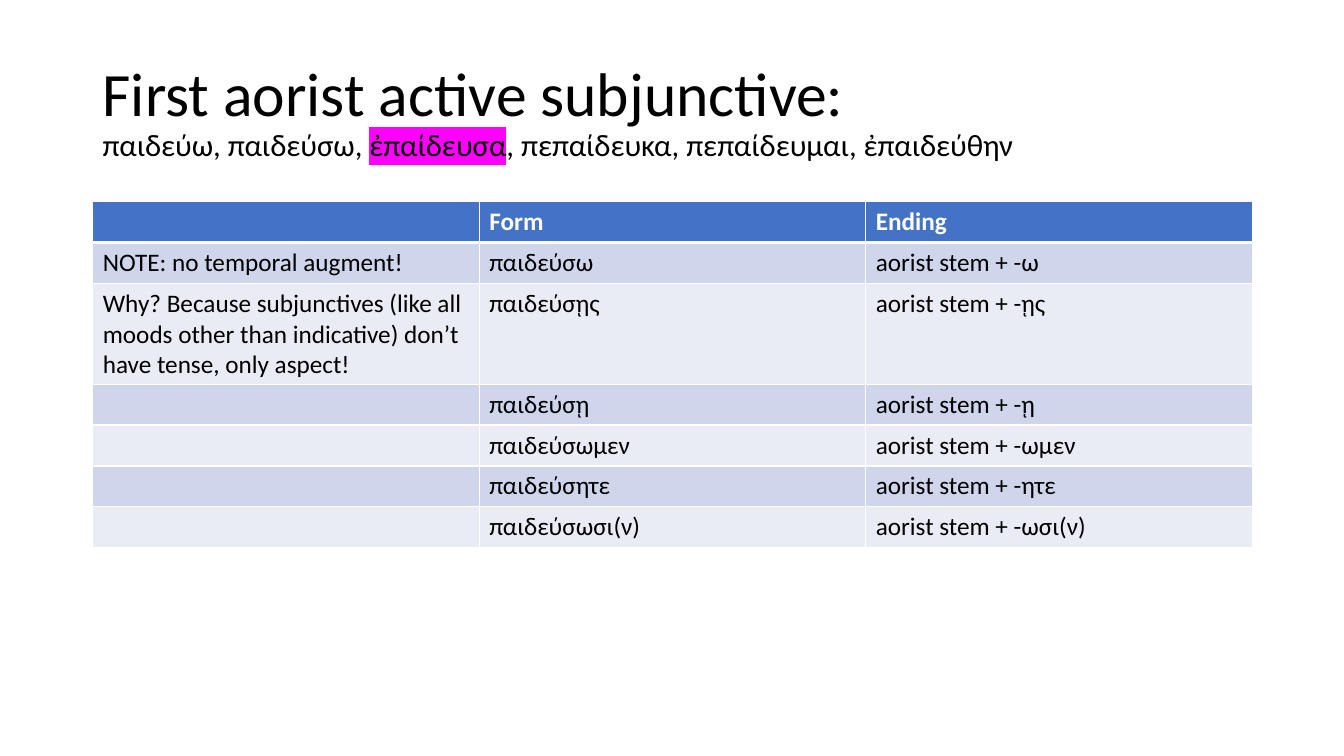
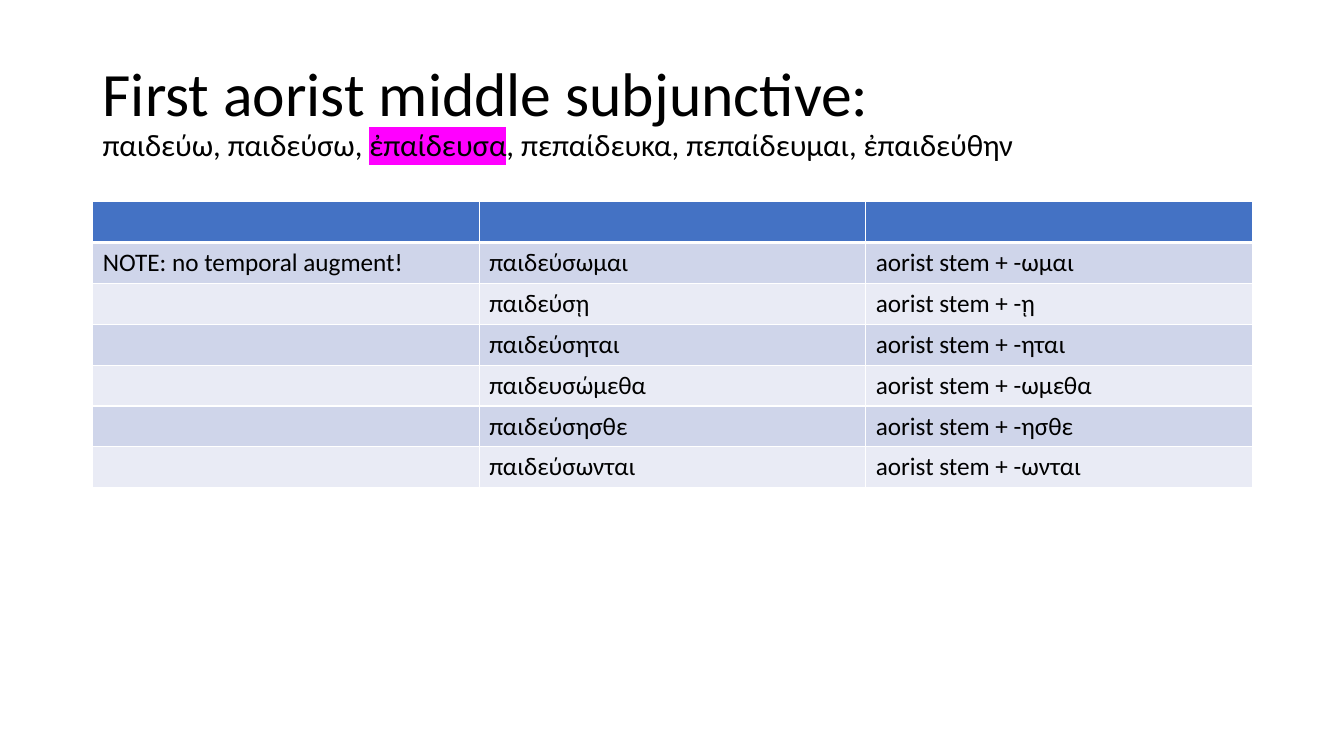
from dataclasses import dataclass

from lxml.etree import SubElement
from pptx import Presentation
from pptx.dml.color import RGBColor
from pptx.enum.text import MSO_ANCHOR
from pptx.oxml import parse_xml
from pptx.oxml.ns import nsdecls, qn
from pptx.util import Inches, Pt

# Content
PRINCIPAL_PARTS = [
    ("παιδεύω, παιδεύσω, ", False),
    ("ἐπαίδευσα", True),
    (", πεπαίδευκα, πεπαίδευμαι, ἐπαιδεύθην", False),
]
NO_AUGMENT = "NOTE: no temporal augment!"
STEM = "aorist stem + -"
PARADIGMS = [
    {
        "title": "First aorist active subjunctive:",
        "header": ("", "Form", "Ending"),
        "notes": [
            NO_AUGMENT,
            "Why? Because subjunctives (like all moods other than indicative) "
            "don’t have tense, only aspect!",
        ],
        "forms": [
            ("παιδεύσω", "ω"),
            ("παιδεύσῃς", "ῃς"),
            ("παιδεύσῃ", "ῃ"),
            ("παιδεύσωμεν", "ωμεν"),
            ("παιδεύσητε", "ητε"),
            ("παιδεύσωσι(ν)", "ωσι(ν)"),
        ],
    },
    {
        "title": "First aorist middle subjunctive:",
        "header": ("", "", ""),
        "notes": [NO_AUGMENT],
        "forms": [
            ("παιδεύσωμαι", "ωμαι"),
            ("παιδεύσῃ", "ῃ"),
            ("παιδεύσηται", "ηται"),
            ("παιδευσώμεθα", "ωμεθα"),
            ("παιδεύσησθε", "ησθε"),
            ("παιδεύσωνται", "ωνται"),
        ],
    },
]


@dataclass(frozen=True)
class Theme:
    font: str = "Calibri"
    text: str = "000000"
    light: str = "FFFFFF"
    header: str = "4472C4"
    bands: tuple = ("CFD5EA", "E9EBF5")
    highlight: str = "FF00FF"
    title_size: int = 44
    parts_size: int = 22
    table_size: int = 18
    border: int = 1
    header_border: int = 3


THEME = Theme()

# Layout
LEFT, WIDTH = Inches(0.92), Inches(11.5)
TITLE_TOP, TITLE_HEIGHT = Inches(0.4), Inches(1.45)
TABLE_TOP, TABLE_HEIGHT = Inches(2), Inches(2.84)


def style_run(run, size, color=THEME.text, bold=False):
    run.font.name = THEME.font
    run.font.size = Pt(size)
    run.font.bold = bold
    run.font.color.rgb = RGBColor.from_string(color)


def highlight_run(run):
    properties = run.font.fill._xPr
    mark = parse_xml(
        f'<a:highlight {nsdecls("a")}><a:srgbClr val="{THEME.highlight}"/></a:highlight>'
    )
    properties.find(qn("a:solidFill")).addnext(mark)


def add_title(slide, title):
    box = slide.shapes.add_textbox(LEFT, TITLE_TOP, WIDTH, TITLE_HEIGHT)
    frame = box.text_frame
    frame.word_wrap = True
    frame.vertical_anchor = MSO_ANCHOR.MIDDLE
    paragraph = frame.paragraphs[0]
    paragraph.text = title
    paragraph.line_spacing = 0.9
    style_run(paragraph.runs[0], THEME.title_size)
    paragraph.add_line_break()
    for text, highlighted in PRINCIPAL_PARTS:
        run = paragraph.add_run()
        run.text = text
        style_run(run, THEME.parts_size)
        if highlighted:
            highlight_run(run)


def set_borders(cell, top, bottom):
    properties = cell._tc.get_or_add_tcPr()
    widths = {"lnL": THEME.border, "lnR": THEME.border, "lnT": top, "lnB": bottom}
    for side, width in widths.items():
        line = SubElement(properties, qn(f"a:{side}"), w=str(Pt(width)))
        fill = SubElement(line, qn("a:solidFill"))
        SubElement(fill, qn("a:srgbClr"), val=THEME.light)


def style_cell(cell, row):
    is_header = row == 0
    set_borders(
        cell,
        top=THEME.header_border if row == 1 else THEME.border,
        bottom=THEME.header_border if is_header else THEME.border,
    )
    fill_color = THEME.header if is_header else THEME.bands[(row - 1) % 2]
    cell.fill.solid()
    cell.fill.fore_color.rgb = RGBColor.from_string(fill_color)
    text_color = THEME.light if is_header else THEME.text
    for run in cell.text_frame.paragraphs[0].runs:
        style_run(run, THEME.table_size, text_color, bold=is_header)


def add_paradigm_table(slide, paradigm):
    forms, notes = paradigm["forms"], paradigm["notes"]
    notes = notes + [""] * (len(forms) - len(notes))
    rows = [paradigm["header"]]
    rows += [(note, form, STEM + ending) for note, (form, ending) in zip(notes, forms)]
    table = slide.shapes.add_table(
        len(rows), len(rows[0]), LEFT, TABLE_TOP, WIDTH, TABLE_HEIGHT
    ).table
    for row, texts in enumerate(rows):
        for column, text in enumerate(texts):
            cell = table.cell(row, column)
            if text:
                cell.text_frame.text = text
            style_cell(cell, row)


def main():
    presentation = Presentation()
    presentation.slide_width = Inches(13.33)
    presentation.slide_height = Inches(7.5)
    blank = presentation.slide_layouts[6]
    for paradigm in PARADIGMS:
        slide = presentation.slides.add_slide(blank)
        add_title(slide, paradigm["title"])
        add_paradigm_table(slide, paradigm)
    presentation.save("out.pptx")


if __name__ == "__main__":
    main()
